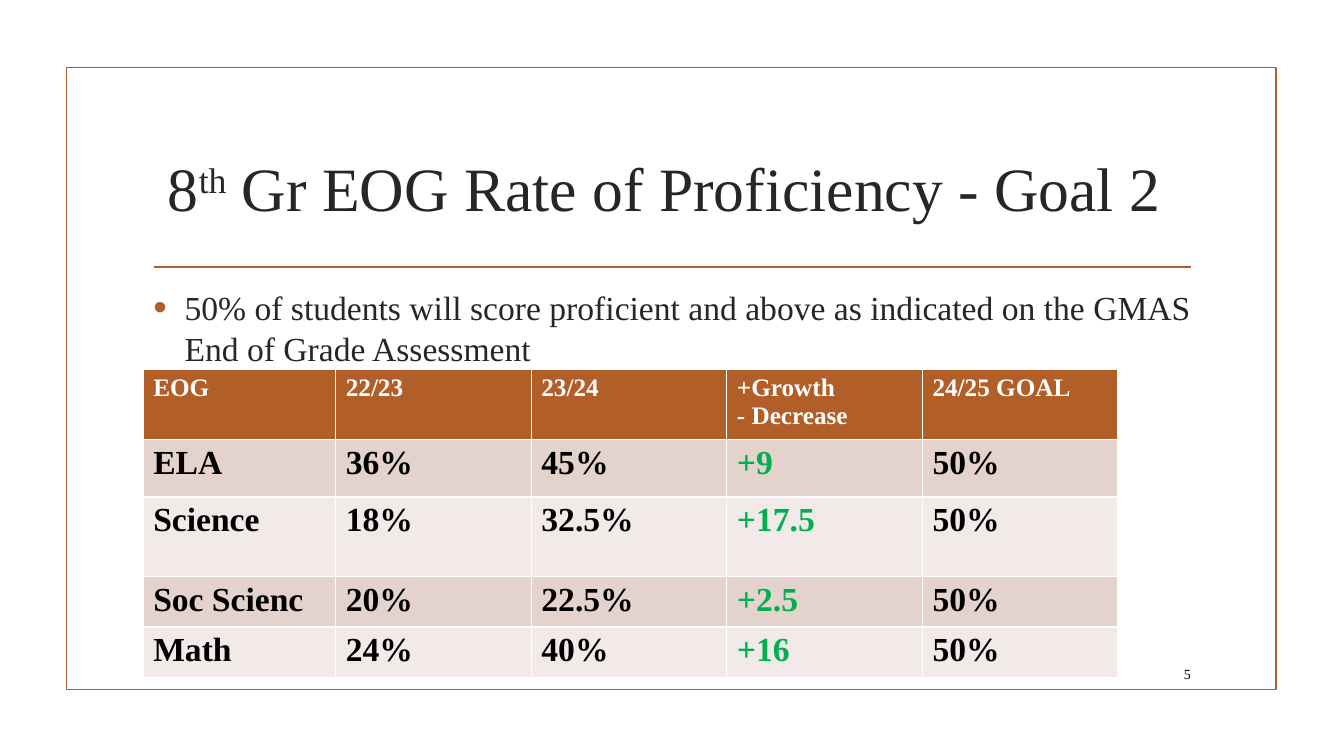
from typing import NamedTuple

from lxml.etree import SubElement
from pptx import Presentation
from pptx.dml.color import RGBColor
from pptx.enum.shapes import MSO_CONNECTOR as Link, MSO_SHAPE as Form
from pptx.enum.text import MSO_ANCHOR as Anchor, MSO_AUTO_SIZE as Fit, PP_ALIGN as Align
from pptx.oxml.ns import qn
from pptx.util import Inches, Pt

RUST = RGBColor(0xB1, 0x5E, 0x28)
INK = RGBColor(0x26, 0x26, 0x26)
BLACK = RGBColor(0, 0, 0)
WHITE = RGBColor(0xFF, 0xFF, 0xFF)
GREEN = RGBColor(0x00, 0xB0, 0x50)
ROSE = RGBColor(0xE4, 0xD2, 0xCD)
PALE = RGBColor(0xF2, 0xEA, 0xE8)
FACE = "Times New Roman"
GROWTH = 3


class Row(NamedTuple):
    height: float
    texts: tuple[str, ...]


HEAD = Row(0.62, ("EOG", "22/23", "23/24", "+Growth\n- Decrease", "24/25 GOAL"))
SCORES = (
    Row(0.57, ("ELA", "36%", "45%", "+9", "50%")),
    Row(0.79, ("Science", "18%", "32.5%", "+17.5", "50%")),
    Row(0.49, ("Soc Scienc", "20%", "22.5%", "+2.5", "50%")),
    Row(0.49, ("Math", "24%", "40%", "+16", "50%")),
)
WIDTHS = (1.91,) + (1.94,) * 4


def style(font, size: float, color: RGBColor, bold: bool = False) -> None:
    for name, value in {"name": FACE, "size": Pt(size), "bold": bold}.items():
        setattr(font, name, value)
    font.color.rgb = color


def place(shape, left: float, top: float, width: float, height: float) -> None:
    spots = {"left": left, "top": top, "width": width, "height": height}
    for name, value in spots.items():
        setattr(shape, name, Inches(value))


def stroke(shape) -> None:
    shape.line.color.rgb = RUST
    shape.line.width = Pt(1.25)


def add_bullet(para) -> None:
    props = para._p.get_or_add_pPr()
    props.set("marL", str(Inches(0.31)))
    props.set("indent", str(-Inches(0.31)))
    tint = SubElement(props, qn("a:buClr"))
    SubElement(tint, qn("a:srgbClr"), val=str(RUST))
    SubElement(props, qn("a:buSzPct"), val="115000")
    SubElement(props, qn("a:buFont"), typeface="Arial")
    SubElement(props, qn("a:buChar"), char="•")


def fill_row(table, index: int, row: Row) -> None:
    table.rows[index].height = Inches(row.height)
    head = index == 0
    back = RUST if head else (ROSE if index % 2 else PALE)
    for col, text in enumerate(row.texts):
        cell = table.cell(index, col)
        cell.text = text
        cell.fill.solid()
        cell.fill.fore_color.rgb = back
        color = WHITE if head else (GREEN if col == GROWTH else BLACK)
        for para in cell.text_frame.paragraphs:
            style(para.font, 18 if head else 24, color, True)


def main() -> None:
    deck = Presentation()
    deck.slide_width, deck.slide_height = Inches(13.33), Inches(7.5)
    slide = deck.slides.add_slide(deck.slide_layouts[1])
    shapes = slide.shapes
    title, body = shapes.title, slide.placeholders[1]

    # Frame and rule
    frame = shapes.add_shape(Form.RECTANGLE, *map(Inches, (0.66, 0.67, 12, 6.17)))
    frame.shadow.inherit = False
    frame.fill.background()
    stroke(frame)
    rule = shapes.add_connector(Link.STRAIGHT, *map(Inches, (1.53, 2.65, 11.81, 2.65)))
    stroke(rule)
    SubElement(rule._element.spPr, qn("a:effectLst"))

    # Title
    place(title, 1.42, 1.14, 10.5, 1.43)
    title.text_frame.auto_size = Fit.NONE
    title.text_frame.vertical_anchor = Anchor.MIDDLE
    para = title.text_frame.paragraphs[0]
    para.alignment = Align.CENTER
    for text, raised in (("8", False), ("th", True), (" Gr EOG Rate of Proficiency - Goal 2 ", False)):
        run = para.add_run()
        run.text = text
        style(run.font, 44, INK)
        if raised:
            run._r.get_or_add_rPr().set("baseline", "30000")

    # Goal
    place(body, 1.42, 2.8, 10.5, 3.83)
    body.text_frame.auto_size = Fit.NONE
    body.text_frame.text = (
        "50% of students will score proficient and above as indicated on the GMAS "
        "End of Grade Assessment"
    )
    goal = body.text_frame.paragraphs[0]
    add_bullet(goal)
    goal.space_before, goal.space_after = Pt(0), Pt(6)
    style(goal.font, 24, INK)

    # Page number
    page = shapes.add_textbox(*map(Inches, (11.32, 6.53, 0.59, 0.31)))
    page.text_frame.word_wrap = True
    page.text_frame.vertical_anchor = Anchor.MIDDLE
    page.text_frame.text = "5"
    number = page.text_frame.paragraphs[0]
    number.alignment = Align.RIGHT
    style(number.font, 10, BLACK)

    # Score table
    rows = (HEAD, *SCORES)
    area = map(Inches, (1.42, 3.66, sum(WIDTHS), sum(row.height for row in rows)))
    table = shapes.add_table(len(rows), len(WIDTHS), *area).table
    for col, width in zip(table.columns, WIDTHS):
        col.width = Inches(width)
    for index, row in enumerate(rows):
        fill_row(table, index, row)

    deck.save("out.pptx")


if __name__ == "__main__":
    main()
